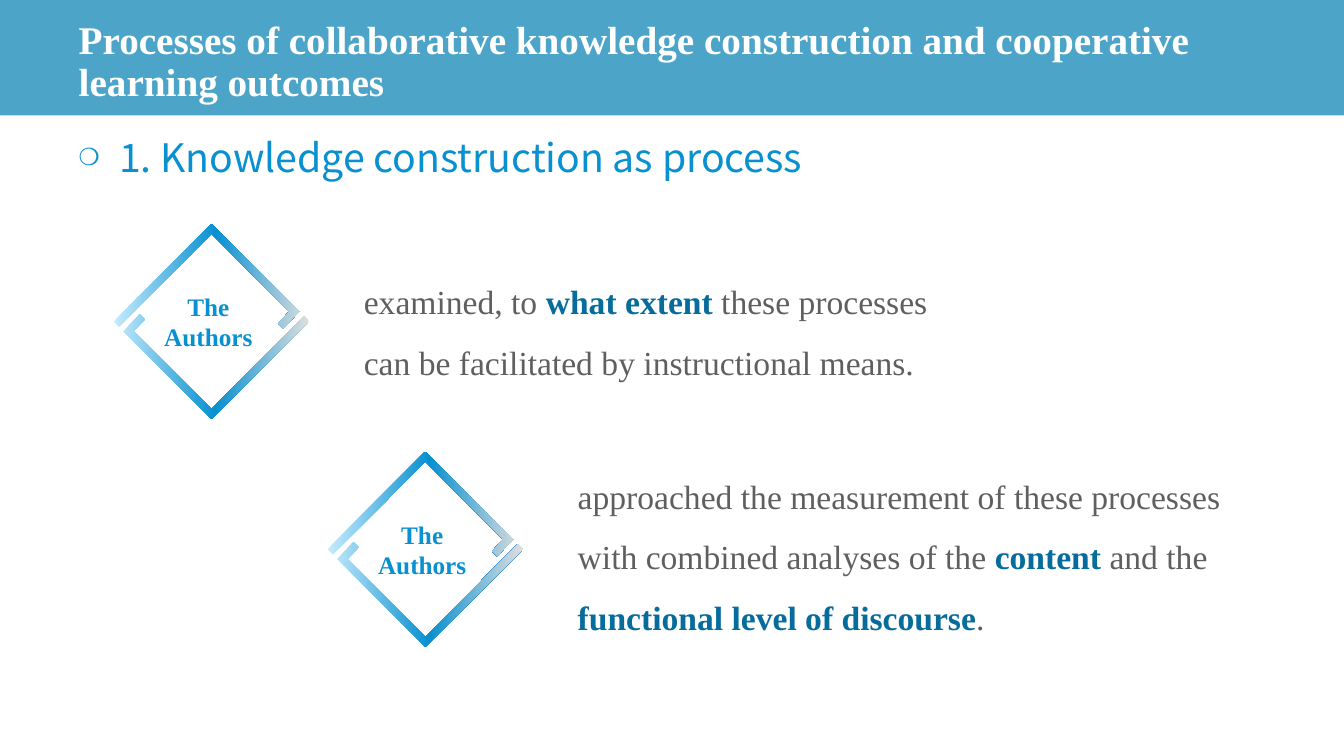
from lxml.etree import SubElement
from pptx import Presentation
from pptx.dml.color import RGBColor
from pptx.enum.shapes import MSO_SHAPE as SHAPE
from pptx.enum.text import MSO_ANCHOR as ANCHOR, MSO_AUTO_SIZE as AUTO, PP_ALIGN as ALIGN
from pptx.oxml.ns import qn
from pptx.util import Cm, Pt

BAND, BLUE, DARK, GREY, WHITE = "0080B2", "0890D0", "066C9C", "5F5F5F", "FFFFFF"
SERIF, SANS = "Times New Roman", "Noto Sans CJK SC"
DIAMOND = 492
HALF = [(246, 0), (467, 221), (427, 264), (414, 251),
        (442, 221), (246, 25), (13, 259), (0, 246)]


def rgb(value):
    return RGBColor.from_string(value)


def add_run(p, text, size=24, color=GREY, bold=False, font=SERIF):
    r = p.add_run()
    r.text = text
    r.font.name, r.font.size, r.font.bold = font, Pt(size), bold
    r.font.color.rgb = rgb(color)


def sub(parent, tag, **attrs):
    return SubElement(parent, qn(tag), **attrs)


class Deck:
    def __init__(self):
        self.prs = Presentation()
        self.prs.slide_width, self.prs.slide_height = Cm(33.87), Cm(19.05)
        self.s = self.prs.slides.add_slide(self.prs.slide_layouts[1])

    def band(self, height):
        sp = self.s.shapes.add_shape(SHAPE.RECTANGLE, 0, 0, self.prs.slide_width, Cm(height))
        sp.shadow.inherit = False
        sp.line.fill.background()
        sp.fill.solid()
        sp.fill.fore_color.rgb = rgb(BAND)
        sub(sp.fill._xPr.find(".//" + qn("a:srgbClr")), "a:alpha", val="70000")
        self.s.shapes._spTree.insert(2, sp._element)

    def place(self, sp, left, top, width, height, anchor):
        sp.left, sp.top, sp.width, sp.height = map(Cm, (left, top, width, height))
        tf = sp.text_frame
        tf.word_wrap, tf.auto_size, tf.vertical_anchor = True, AUTO.NONE, anchor
        return tf.paragraphs[0]

    def title(self, text):
        p = self.place(self.s.shapes.title, 1.73, 0.48, 30.43, 2.21, ANCHOR.MIDDLE)
        p.alignment, p.line_spacing = ALIGN.LEFT, 0.9
        add_run(p, text, size=28, color=WHITE, bold=True)

    def bullet(self, text):
        p = self.place(self.s.placeholders[1], 1.73, 3.12, 30.43, 2.29, ANCHOR.TOP)
        p.alignment, p.line_spacing, p.space_before = ALIGN.JUSTIFY, 1.1, Pt(0)
        pPr = p._p.get_or_add_pPr()
        pPr.set("marL", str(Cm(1.02)))
        pPr.set("indent", str(Cm(-1.02)))
        sub(sub(pPr, "a:buClr"), "a:srgbClr", val=BLUE)
        sub(pPr, "a:buSzPct", val="60000")
        sub(pPr, "a:buChar", char="❍")
        add_run(p, text, size=28, color=BLUE, font=SANS)

    def diamond(self, left, top, lines):
        mirrored = [(DIAMOND - x, DIAMOND - y) for x, y in HALF]
        builder = self.s.shapes.build_freeform(*mirrored[0], scale=Cm(0.01))
        builder.add_line_segments(mirrored[1:])
        builder.move_to(*HALF[0])
        builder.add_line_segments(HALF[1:])
        sp = builder.convert_to_shape(Cm(left), Cm(top))
        sp.shadow.inherit = False
        sp.line.fill.background()
        sp.fill.gradient()
        sp.fill.gradient_angle = 0
        stops = sp.fill._xPr.find(".//" + qn("a:gsLst"))
        stops.clear()
        for pos, color in ((0, "C6EBFD"), (52, BLUE), (100, "DFDFDF")):
            sub(sub(stops, "a:gs", pos=str(pos * 1000)), "a:srgbClr", val=color)
        tf = sp.text_frame
        tf.word_wrap, tf.vertical_anchor = True, ANCHOR.MIDDLE
        for i, line in enumerate(lines):
            p = tf.add_paragraph() if i else tf.paragraphs[0]
            p.alignment = ALIGN.CENTER
            add_run(p, line, size=18, color=BLUE, bold=True)

    def text(self, left, top, width, height, parts):
        sp = self.s.shapes.add_textbox(0, 0, 0, 0)
        p = self.place(sp, left, top, width, height, ANCHOR.MIDDLE)
        tf = sp.text_frame
        tf.margin_left = tf.margin_right = tf.margin_top = tf.margin_bottom = 0
        p.line_spacing = 1.5
        p._p.get_or_add_pPr().set("marL", str(Cm(0.97)))
        for i, part in enumerate(parts):
            strong = i % 2 == 1
            add_run(p, part, color=DARK if strong else GREY, bold=strong)


def main():
    deck = Deck()
    deck.band(2.91)
    deck.title("Processes of collaborative knowledge construction and cooperative learning outcomes")
    deck.bullet("1. Knowledge construction as process")
    authors = ["The ", "Authors "]
    deck.diamond(2.87, 5.64, authors)
    deck.text(8.2, 6.3, 15.72, 3.61, [
        "examined, to ", "what extent ",
        "these processes can be facilitated by instructional means."])
    deck.diamond(8.26, 11.38, authors)
    deck.text(13.59, 10.46, 17.78, 6.6, [
        "approached the measurement of these processes with combined analyses of the ",
        "content", " and the ", "functional level of discourse", "."])
    deck.prs.save("out.pptx")


if __name__ == "__main__":
    main()
